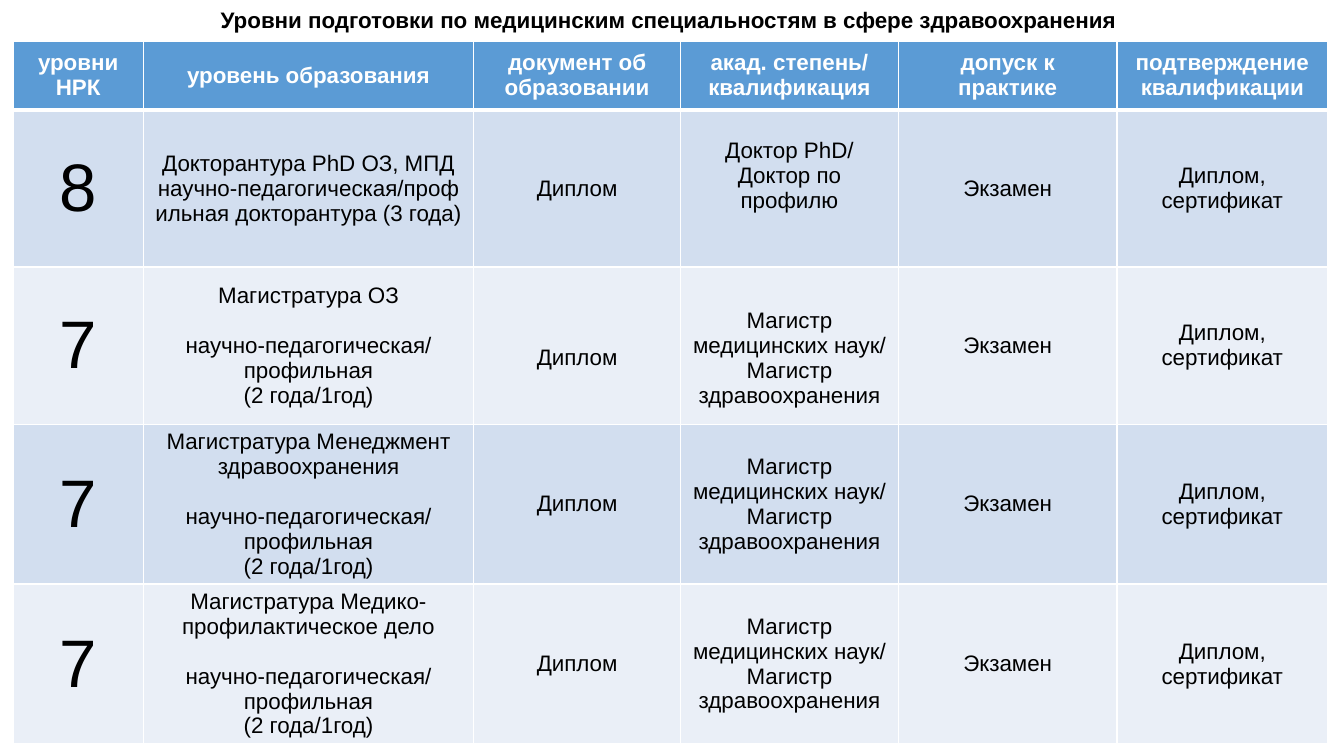
from lxml.etree import SubElement
from pptx import Presentation
from pptx.dml.color import RGBColor
from pptx.enum.text import MSO_ANCHOR as Anchor, PP_ALIGN as Align
from pptx.oxml.ns import qn
from pptx.util import Cm, Pt

HEADINGS = [
    "уровни НРК",
    "уровень образования",
    "документ об образовании",
    "акад. степень/ квалификация",
    "допуск к практике",
    "подтверждение квалификации",
]
MASTER_DEGREE = "Магистр медицинских наук/ Магистр здравоохранения"
DOCTORATE = "Докторантура PhD ОЗ, МПД научно-педагогическая/профильная докторантура (3 года)"
MASTER_PROGRAMMES = ["ОЗ", "Менеджмент здравоохранения", "Медико-профилактическое дело"]
COLUMN_WIDTHS = [3.28, 8.33, 5.21, 5.49, 5.51, 5.31]
HEADING_HEIGHT = 1.73
LEVEL_HEIGHT = 3.96
BLANK_LINE = Cm(0.63)


def color(hex_code):
    return RGBColor.from_string(hex_code)


def write(frame, text, size=16, bold=False, ink="000000", line_spacing=None, first_gap=0):
    frame.text = text
    frame.word_wrap = True
    for index, paragraph in enumerate(frame.paragraphs):
        paragraph.alignment = Align.CENTER
        paragraph.line_spacing = line_spacing
        paragraph.space_before = Pt(first_gap if index == 1 else 0)
        for run in paragraph.runs:
            run.font.name = "Arial"
            run.font.size = Pt(size)
            run.font.bold = bold
            run.font.color.rgb = color(ink)


def add_borders(cell, hex_code, top=1, bottom=1):
    properties = cell._tc.get_or_add_tcPr()
    for side, width in (("L", 1), ("R", 1), ("T", top), ("B", bottom)):
        border = SubElement(properties, qn(f"a:ln{side}"), w=str(Pt(width)))
        border_fill = SubElement(border, qn("a:solidFill"))
        SubElement(border_fill, qn("a:srgbClr"), val=str(color(hex_code)))


def fill_cell(cell, text, background, top=1, bottom=1, **text_format):
    add_borders(cell, "FFFFFF", top, bottom)
    cell.fill.solid()
    cell.fill.fore_color.rgb = color(background)
    cell.vertical_anchor = Anchor.MIDDLE
    write(cell.text_frame, text, **text_format)


def level_row(level, programme, degree):
    return [level, programme, "Диплом", degree, "Экзамен", "Диплом, сертификат"]


def place_title(slide, left, top, width, height):
    title = slide.shapes.title
    title.left, title.top, title.width, title.height = left, top, width, height
    title.text_frame.vertical_anchor = Anchor.MIDDLE
    write(
        title.text_frame,
        "Уровни подготовки по медицинским специальностям в сфере здравоохранения",
        bold=True,
        line_spacing=0.9,
    )


def place_levels(slide, left, top, width, height):
    levels = [level_row("8", DOCTORATE, "Доктор PhD/ Доктор по профилю")]
    for programme in MASTER_PROGRAMMES:
        description = f"Магистратура {programme}\nнаучно-педагогическая/профильная\n(2 года/1год)"
        levels.append(level_row("7", description, MASTER_DEGREE))

    table = slide.shapes.add_table(
        len(levels) + 1, len(HEADINGS), left, top, width, height
    ).table
    for column, column_width in zip(table.columns, COLUMN_WIDTHS):
        column.width = Cm(column_width)
    for index, row in enumerate(table.rows):
        row.height = Cm(LEVEL_HEIGHT if index else HEADING_HEIGHT)

    for column, heading in enumerate(HEADINGS):
        fill_cell(table.cell(0, column), heading, "5B9BD5", bottom=3, bold=True, ink="FFFFFF")
    for row, level in enumerate(levels, start=1):
        for column, entry in enumerate(level):
            fill_cell(
                table.cell(row, column),
                entry,
                "D2DEEF" if row % 2 else "EAEFF7",
                top=3 if row == 1 else 1,
                size=16 if column else 48,
                first_gap=18 if column == 1 else 0,
            )

    table.cell(1, 3).margin_bottom += BLANK_LINE
    for column in (2, 3):
        table.cell(2, column).margin_top += BLANK_LINE


def main():
    presentation = Presentation()
    presentation.slide_width = Cm(33.87)
    presentation.slide_height = Cm(19.05)
    slide = presentation.slides.add_slide(presentation.slide_layouts[5])
    place_title(slide, Cm(0.2), Cm(0.05), Cm(33.3), Cm(0.99))
    place_levels(
        slide, Cm(0.33), Cm(1.04), Cm(sum(COLUMN_WIDTHS)), Cm(HEADING_HEIGHT + 4 * LEVEL_HEIGHT)
    )
    presentation.save("out.pptx")


if __name__ == "__main__":
    main()
